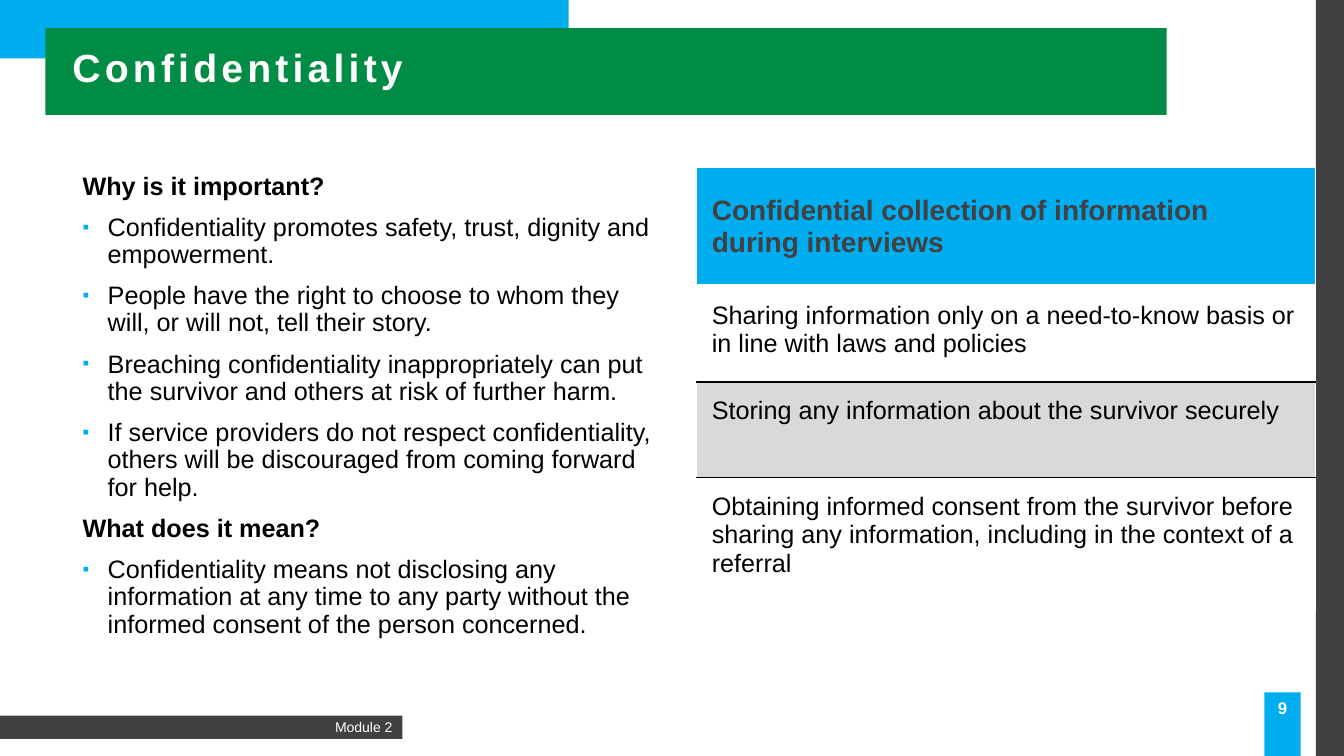
from dataclasses import dataclass

import pptx
import pptx.dml.color
import pptx.enum.shapes
import pptx.enum.text
import pptx.oxml
import pptx.oxml.ns
import pptx.util
from lxml import etree

Inches = pptx.util.Inches
Pt = pptx.util.Pt
ALIGN = pptx.enum.text.PP_ALIGN
ANCHOR = pptx.enum.text.MSO_ANCHOR

FONT = "Arial"
BLUE, GREEN, CHARCOAL = "00ADEF", "008C44", "414042"
GREY, WHITE, BLACK = "D9D8DA", "FFFFFF", "000000"


@dataclass
class Band:
    left: float
    top: float
    width: float
    height: float
    fill: str


@dataclass
class Row:
    text: str
    height: float
    fill: str | None = None
    top_line: tuple[str, float] = (WHITE, 1)
    bottom_line: tuple[str, float] = (BLACK, 1)
    header: bool = False


@dataclass
class Section:
    heading: str
    points: list[str]


SIDE_BAR = Band(13.05, 0, 0.28, 7.5, CHARCOAL)
TOP_ACCENT = Band(0, 0, 5.64, 0.58, BLUE)
TITLE_BAND = Band(0.45, 0.28, 11.12, 0.86, GREEN)
MODULE_BAND = Band(0, 7.1, 3.99, 0.23, CHARCOAL)
PAGE_TAB = Band(12.54, 6.87, 0.36, 0.63, BLUE)

SECTIONS = [
    Section("Why is it important?", [
        "Confidentiality promotes safety, trust, dignity and empowerment.",
        "People have the right to choose to whom they will, or will not, tell their story.",
        "Breaching confidentiality inappropriately can put the survivor and others "
        "at risk of further harm.",
        "If service providers do not respect confidentiality, others will be "
        "discouraged from coming forward for help.",
    ]),
    Section("What does it mean?", [
        "Confidentiality means not disclosing any information at any time to any party "
        "without the informed consent of the person concerned.",
    ]),
]

ROWS = [
    Row("Confidential collection of information during interviews", 1.18, BLUE,
        bottom_line=(WHITE, 3), header=True),
    Row("Sharing information only on a need-to-know basis or in line with laws and policies",
        0.95),
    Row("Storing any information about the survivor securely", 0.95, GREY,
        top_line=(BLACK, 1)),
    Row("Obtaining informed consent from the survivor before sharing any information, "
        "including in the context of a referral", 1.31,
        top_line=(BLACK, 1), bottom_line=(WHITE, 1)),
]


def color(value: str) -> pptx.dml.color.RGBColor:
    return pptx.dml.color.RGBColor.from_string(value)


def write(paragraph, text: str, *, size: float = 18, fill: str = BLACK,
          bold: bool = False, align=ALIGN.LEFT, before: float = 0,
          line_spacing: float = 1.0, tracking: float = 0) -> None:
    paragraph.alignment = align
    paragraph.space_before = Pt(before)
    paragraph.line_spacing = line_spacing
    run = paragraph.add_run()
    run.text = text
    run.font.name = FONT
    run.font.size = Pt(size)
    run.font.bold = bold
    run.font.color.rgb = color(fill)
    if tracking:
        run._r.get_or_add_rPr().set("spc", str(round(tracking * 100)))


def add_bullet(paragraph) -> None:
    properties = paragraph._p.get_or_add_pPr()
    properties.set("marL", str(Inches(0.25)))
    properties.set("indent", str(-Inches(0.25)))
    bullet_color = etree.SubElement(properties, pptx.oxml.ns.qn("a:buClr"))
    etree.SubElement(bullet_color, pptx.oxml.ns.qn("a:srgbClr"), val=BLUE)
    etree.SubElement(properties, pptx.oxml.ns.qn("a:buSzPct"), val="75000")
    etree.SubElement(properties, pptx.oxml.ns.qn("a:buFont"), typeface=FONT)
    etree.SubElement(properties, pptx.oxml.ns.qn("a:buChar"), char="▪")


def add_band(slide, band: Band):
    shape = slide.shapes.add_shape(
        pptx.enum.shapes.MSO_SHAPE.RECTANGLE, Inches(band.left), Inches(band.top),
        Inches(band.width), Inches(band.height))
    shape.shadow.inherit = False
    shape.fill.solid()
    shape.fill.fore_color.rgb = color(band.fill)
    shape.line.fill.background()
    return shape


def add_text_frame(slide, left: float, top: float, width: float, height: float,
                   anchor=ANCHOR.TOP):
    box = slide.shapes.add_textbox(Inches(left), Inches(top), Inches(width), Inches(height))
    frame = box.text_frame
    frame.word_wrap = True
    frame.vertical_anchor = anchor
    return frame


def add_sections(slide) -> None:
    frame = add_text_frame(slide, 0.72, 1.67, 5.95, 4.77)
    lines = [(text, text == section.heading) for section in SECTIONS
             for text in (section.heading, *section.points)]
    for index, (text, is_heading) in enumerate(lines):
        paragraph = frame.add_paragraph() if index else frame.paragraphs[0]
        write(paragraph, text, bold=is_heading, before=10, line_spacing=0.9)
        if not is_heading:
            add_bullet(paragraph)


def set_border(cell, side: str, line_color: str, width: float) -> None:
    line = etree.SubElement(cell._tc.get_or_add_tcPr(), pptx.oxml.ns.qn(f"a:ln{side}"),
                            w=str(Pt(width)))
    fill = etree.SubElement(line, pptx.oxml.ns.qn("a:solidFill"))
    etree.SubElement(fill, pptx.oxml.ns.qn("a:srgbClr"), val=line_color)


def add_practice_table(slide) -> None:
    height = sum(row.height for row in ROWS)
    table = slide.shapes.add_table(len(ROWS), 1, Inches(6.91), Inches(1.66),
                                   Inches(6.14), Inches(height)).table
    table.horz_banding = False
    for index, row in enumerate(ROWS):
        table.rows[index].height = Inches(row.height)
        cell = table.cell(index, 0)
        cell.margin_left = cell.margin_right = Inches(0.15)
        cell.margin_top = cell.margin_bottom = Inches(0.15)
        cell.vertical_anchor = ANCHOR.MIDDLE if row.header else ANCHOR.TOP
        borders = {"L": (WHITE, 1), "R": (WHITE, 1),
                   "T": row.top_line, "B": row.bottom_line}
        for side, (line_color, width) in borders.items():
            set_border(cell, side, line_color, width)
        if row.fill:
            cell.fill.solid()
            cell.fill.fore_color.rgb = color(row.fill)
        else:
            cell.fill.background()
        write(cell.text_frame.paragraphs[0], row.text, bold=row.header,
              size=20 if row.header else 18, fill=CHARCOAL if row.header else BLACK)


def main() -> None:
    presentation = pptx.Presentation()
    presentation.slide_width = Inches(13.33)
    presentation.slide_height = Inches(7.5)
    slide = presentation.slides.add_slide(presentation.slide_layouts[6])

    for band in (SIDE_BAR, TOP_ACCENT, TITLE_BAND):
        add_band(slide, band)

    module = add_band(slide, MODULE_BAND).text_frame
    module.vertical_anchor = ANCHOR.MIDDLE
    write(module.paragraphs[0], "Module 2", size=10, fill=WHITE, align=ALIGN.RIGHT)

    page = add_band(slide, PAGE_TAB).text_frame
    page.vertical_anchor = ANCHOR.TOP
    page.margin_left = page.margin_right = Inches(0.04)
    write(page.paragraphs[0], "9", size=12, fill=WHITE, bold=True, align=ALIGN.CENTER)

    add_sections(slide)
    title = add_text_frame(slide, 0.62, 0.39, 9.44, 0.61, ANCHOR.MIDDLE)
    write(title.paragraphs[0], "Confidentiality", size=28, fill=WHITE, bold=True,
          before=10, line_spacing=0.9, tracking=3)
    add_practice_table(slide)

    presentation.save("out.pptx")


if __name__ == "__main__":
    main()
